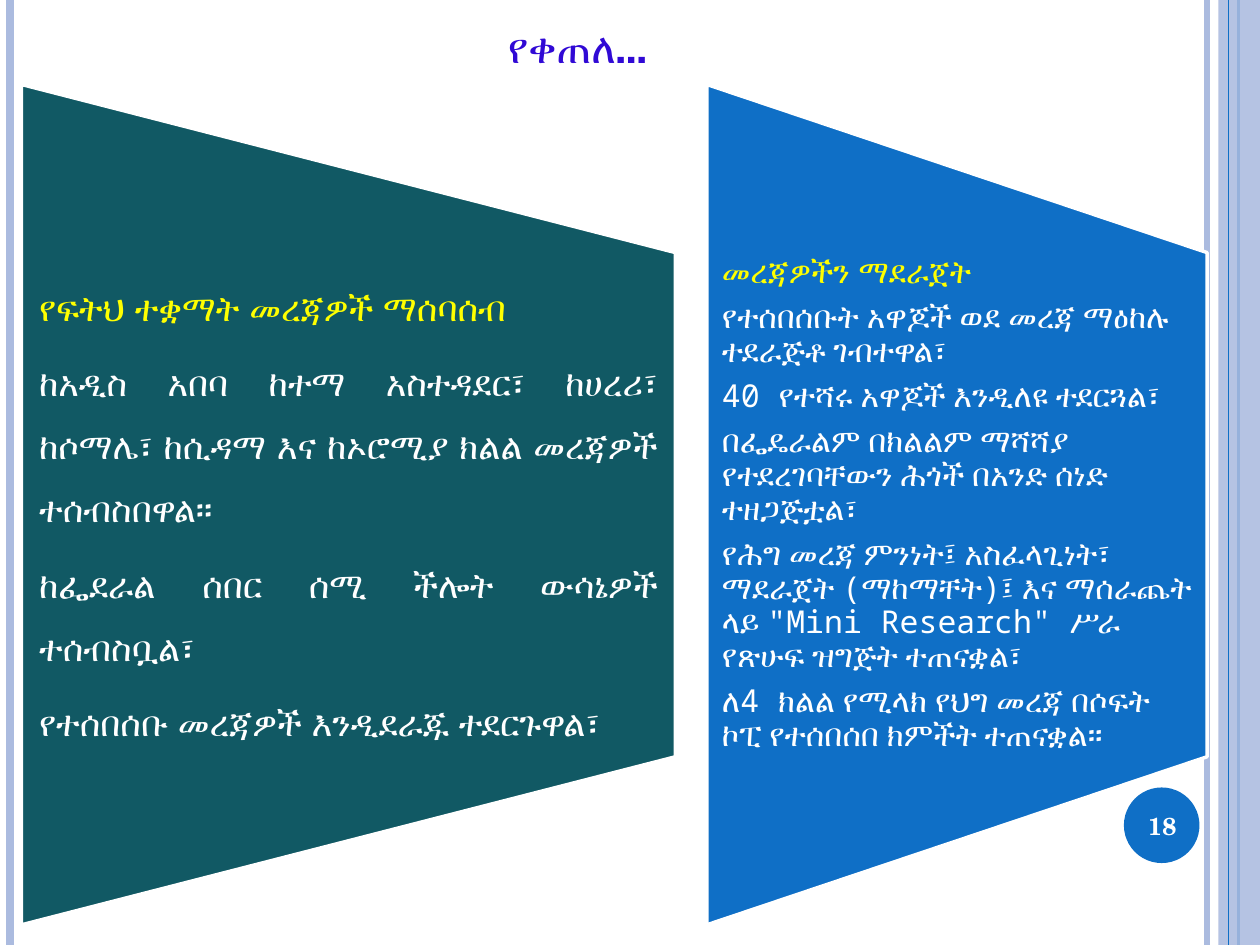
from lxml import etree
from pptx import Presentation
from pptx.dml.color import RGBColor
from pptx.enum.shapes import MSO_CONNECTOR, MSO_SHAPE
from pptx.enum.text import MSO_ANCHOR, MSO_AUTO_SIZE, PP_ALIGN
from pptx.oxml.ns import qn
from pptx.util import Inches, Pt

LINE = MSO_CONNECTOR.STRAIGHT
RECT, OVAL = MSO_SHAPE.RECTANGLE, MSO_SHAPE.OVAL
TRAP = MSO_SHAPE.FLOWCHART_MANUAL_OPERATION
MID, LOW = MSO_ANCHOR.MIDDLE, MSO_ANCHOR.BOTTOM
LEFT, CENTER, FULL = PP_ALIGN.LEFT, PP_ALIGN.CENTER, PP_ALIGN.JUSTIFY
MONO, SERIF = "Noto Sans Mono", "TeX Gyre Schola"
COLORS = {"pale": "ABBBDF", "blue": "0F6FC6", "teal": "115964",
          "white": "FFFFFF", "gold": "FFFF00", "ink": "3009D5"}

GATHER = [
    "የፍትህ ተቋማት መረጃዎች ማሰባሰብ",
    "ከአዲስ አበባ ከተማ አስተዳደር፣ ከሀረሪ፣ ከሶማሌ፣ ከሲዳማ እና ከኦሮሚያ ክልል መረጃዎች ተሰብስበዋል፡፡",
    "ከፌደራል ሰበር ሰሚ ችሎት ውሳኔዎች ተሰብስቧል፣",
    "የተሰበሰቡ መረጃዎች እንዲደራጁ ተደርጉዋል፣",
]
ORDER = [
    "መረጃዎችን ማደራጀት",
    "የተሰበሰቡት አዋጆች ወደ መረጃ ማዕከሉ ተደራጅቶ ገብተዋል፣",
    "40 የተሻሩ አዋጆች እንዲለዩ ተደርጓል፣",
    "በፌዴራልም በክልልም ማሻሻያ የተደረገባቸውን ሕጎች በአንድ ሰነድ ተዘጋጅቷል፣",
    "የሕግ መረጃ ምንነት፤ አስፈላጊነት፣ ማደራጀት (ማከማቸት)፤ እና ማሰራጨት ላይ \"Mini Research\" ሥራ የጽሁፍ ዝግጅት ተጠናቋል፣",
    "ለ4 ክልል የሚላክ የህግ መረጃ በሶፍት ኮፒ የተሰበሰበ ክምችት ተጠናቋል፡፡",
]


def tint(name):
    """Return the named colour."""
    return RGBColor.from_string(COLORS[name])


def write(para, text, size=18, color="white", bold=True, font=MONO,
          align=LEFT, lead=1.0, after=0):
    """Fill a paragraph with one formatted run."""
    para.alignment, para.line_spacing = align, lead
    para.space_before, para.space_after = Pt(0), Pt(after)
    run = para.add_run()
    run.text = text
    run.font.size, run.font.bold, run.font.name = Pt(size), bold, font
    run.font.color.rgb = tint(color)


def frame(shape, anchor, side=0.1, edge=0.05):
    """Set wrapping, anchor and insets, and return the text frame."""
    area = shape.text_frame
    area.word_wrap, area.auto_size = True, MSO_AUTO_SIZE.NONE
    area.vertical_anchor = anchor
    area.margin_left = area.margin_right = Inches(side)
    area.margin_top = area.margin_bottom = Inches(edge)
    return area


def form(slide, kind, box, fill, line=None):
    """Add a flat filled shape."""
    shape = slide.shapes.add_shape(kind, *map(Inches, box))
    shape.shadow.inherit = False
    shape.fill.solid()
    shape.fill.fore_color.rgb = tint(fill)
    if line:
        shape.line.color.rgb, shape.line.width = tint(line), Pt(2)
    else:
        shape.line.fill.background()
    return shape


def rule(slide, x, high, color, width):
    """Add a full-height vertical line."""
    line = slide.shapes.add_connector(
        LINE, Inches(x), Inches(0), Inches(x), Inches(high))
    line.line.color.rgb, line.line.width = tint(color), Pt(width)
    etree.SubElement(line._element.spPr, qn("a:effectLst"))


def edges(slide, high):
    """Draw the stripes along both sides."""
    rule(slide, 9.58, high, "pale", 3)
    rule(slide, 0.08, high, "pale", 4.5)
    rule(slide, 9.83, high, "blue", 1.5)
    band = form(slide, RECT, (9.67, 0, 0.33, high), "pale")
    shade = band._element.spPr.find(qn("a:solidFill"))[0]
    etree.SubElement(shade, qn("a:alpha"), val="87000")
    rule(slide, 9.75, high, "blue", 0.75)


def head(slide, box, text):
    """Place the title."""
    title = slide.shapes.title
    title.left, title.top, title.width, title.height = map(Inches, box)
    area = frame(title, LOW)
    write(area.paragraphs[0], text, size=24, color="ink", align=CENTER)


def badge(slide, box, text):
    """Draw the round page number."""
    form(slide, OVAL, box, "blue")
    x, y, wide, high = box
    note = slide.shapes.add_textbox(
        *map(Inches, (x - 0.03, y + 0.02, wide + 0.07, high - 0.03)))
    write(frame(note, MID).paragraphs[0], text, size=14, font=SERIF,
          align=CENTER)


def panel(slide, box, fill, lines, side, bold, **style):
    """Draw a turned trapezoid with a heading and its points."""
    x, y, wide, high = box
    turn = (high - wide) / 2
    shape = form(slide, TRAP, (x - turn, y + turn, high, wide), fill, "white")
    shape.rotation = 270
    note = slide.shapes.add_textbox(
        *map(Inches, (x, y + high / 5, wide, high * 3 / 5)))
    area = frame(note, MID, side, 0)
    for i, text in enumerate(lines):
        para = area.add_paragraph() if i else area.paragraphs[0]
        write(para, text, color="white" if i else "gold",
              bold=bold or i == 0, **style)


def main():
    """Build and save the slide."""
    deck = Presentation()
    deck.slide_width, deck.slide_height = Inches(10), Inches(7.5)
    slide = deck.slides.add_slide(deck.slide_layouts[5])
    edges(slide, 7.5)
    badge(slide, (8.92, 6.25, 0.6, 0.6), "18")
    head(slide, (0.5, 0.17, 8.17, 0.45), "የቀጠለ…")
    panel(slide, (0.17, 0.67, 5.19, 6.67), "teal", GATHER, 0.14, True,
          size=20, align=FULL, lead=1.5, after=7)
    panel(slide, (5.61, 0.67, 3.97, 6.67), "blue", ORDER, 0.12, False,
          size=18, lead=0.9, after=6.3)
    deck.save("out.pptx")


if __name__ == "__main__":
    main()
